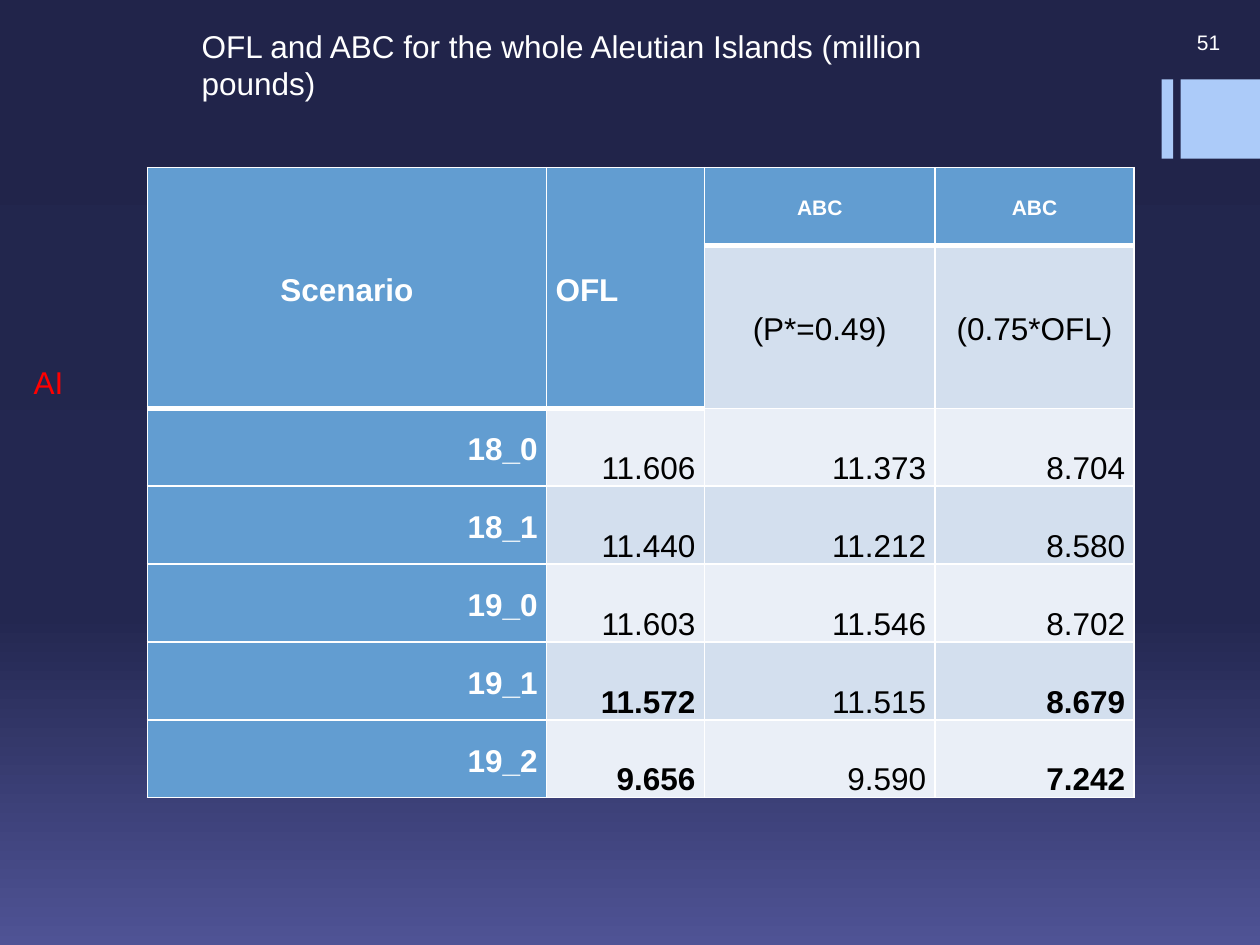
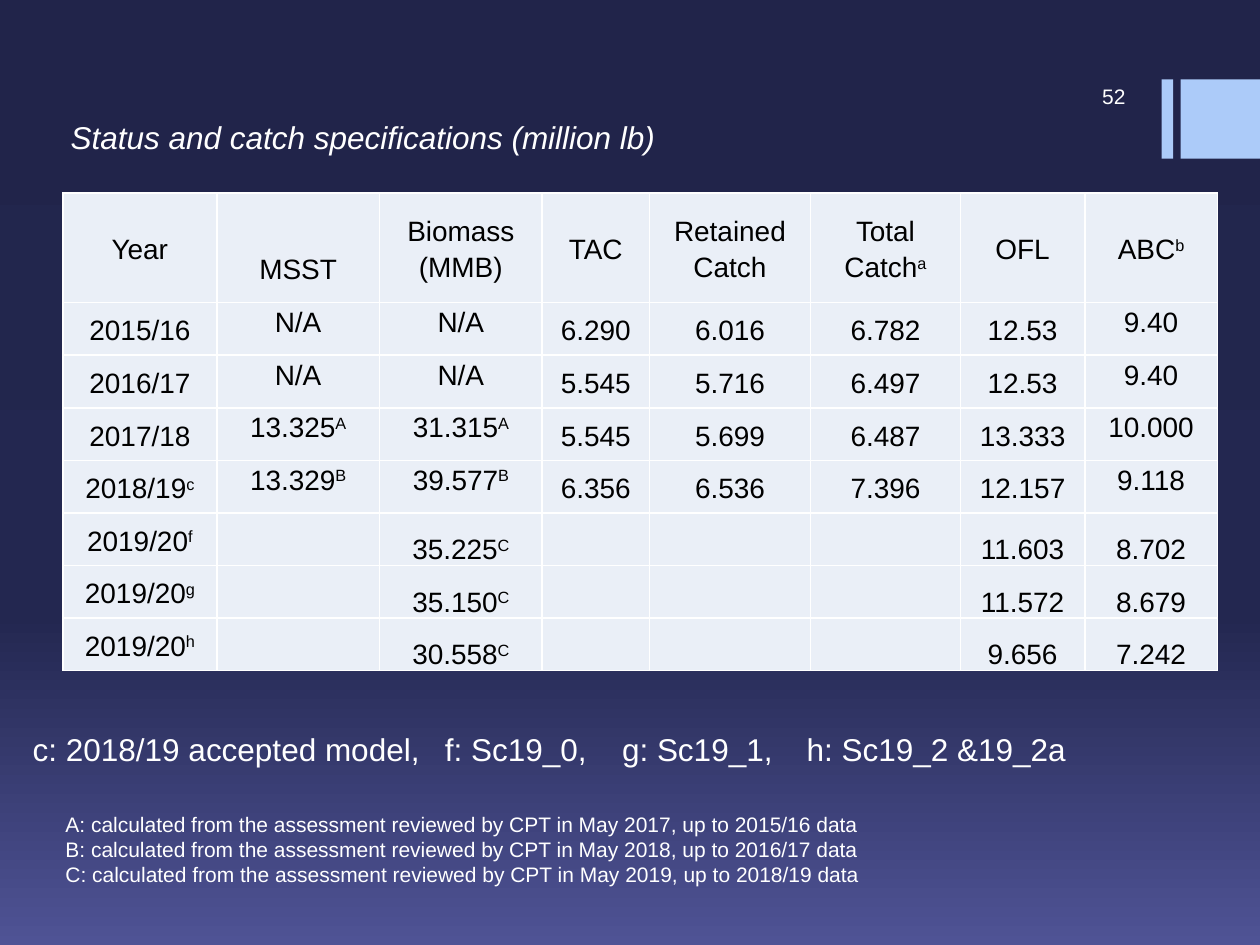
from copy import deepcopy

from lxml import etree
from pptx import Presentation
from pptx.dml.color import RGBColor
from pptx.enum.shapes import MSO_SHAPE
from pptx.enum.text import MSO_ANCHOR, MSO_AUTO_SIZE, PP_ALIGN
from pptx.oxml.ns import qn
from pptx.util import Cm, Pt

TOP, MIDDLE, BOTTOM = MSO_ANCHOR.TOP, MSO_ANCHOR.MIDDLE, MSO_ANCHOR.BOTTOM
LEFT, CENTER, RIGHT = PP_ALIGN.LEFT, PP_ALIGN.CENTER, PP_ALIGN.RIGHT
RECTANGLE = MSO_SHAPE.RECTANGLE
FIXED_SIZE = MSO_AUTO_SIZE.NONE

FONT = "Arial"
WHITE = RGBColor(0xFF, 0xFF, 0xFF)
BLACK = RGBColor(0x00, 0x00, 0x00)
RED = RGBColor(0xFF, 0x00, 0x00)
BAR_BLUE = RGBColor(0xAC, 0xCB, 0xF9)
HEADER_BLUE = RGBColor(0x62, 0x9D, 0xD1)
BAND_DARK = RGBColor(0xD3, 0xDF, 0xEE)
BAND_LIGHT = RGBColor(0xEA, 0xEF, 0xF7)
SKY = [(0, RGBColor(0x21, 0x24, 0x4A)),
       (0.65, RGBColor(0x23, 0x27, 0x50)),
       (1, RGBColor(0x4F, 0x53, 0x95))]


def place_text(shape, box, text, size=18, color=WHITE, align=LEFT, anchor=TOP):
    """Move a title or text box to box (cm) and set its text, one paragraph a line."""
    shape.left, shape.top, shape.width, shape.height = [Cm(v) for v in box]
    frame = shape.text_frame
    frame.text = text
    frame.word_wrap = True
    frame.auto_size = FIXED_SIZE
    frame.vertical_anchor = anchor
    for paragraph in frame.paragraphs:
        paragraph.alignment = align
        paragraph.font.name = FONT
        paragraph.font.size = Pt(size)
        paragraph.font.color.rgb = color
    return frame


def fill_cell(cell, text, fill, size, color=BLACK, bold=False, align=CENTER,
              anchor=MIDDLE, bottom_line=1):
    """Write a cell with white borders; text after ^ is superscript."""
    cell.fill.solid()
    cell.fill.fore_color.rgb = fill
    cell.vertical_anchor = anchor
    cell.margin_left = cell.margin_right = Cm(0.18)
    cell.margin_top = cell.margin_bottom = 0
    paragraph = cell.text_frame.paragraphs[0]
    paragraph.alignment = align
    paragraph.line_spacing = 1.15
    paragraph.font.name = FONT
    paragraph.font.size = Pt(size)
    paragraph.font.bold = bold
    paragraph.font.color.rgb = color
    base, _, mark = text.partition("^")
    if base:
        paragraph.add_run().text = base
    if mark:
        superscript = paragraph.add_run()
        superscript.text = mark
        superscript._r.get_or_add_rPr().set("baseline", "30000")
    properties = cell._tc.get_or_add_tcPr()
    for position, side in enumerate(("lnL", "lnR", "lnT", "lnB")):
        width = bottom_line if side == "lnB" else 1
        line = etree.Element(qn(f"a:{side}"), w=str(Pt(width)))
        solid = etree.SubElement(line, qn("a:solidFill"))
        etree.SubElement(solid, qn("a:srgbClr"), val=str(WHITE))
        properties.insert(position, line)


prs = Presentation()
prs.slide_width, prs.slide_height = Cm(25.4), Cm(19.05)
title_only = prs.slide_layouts[5]
limits = prs.slides.add_slide(title_only)
status = prs.slides.add_slide(title_only)

# Shared look, kept on the master
master = prs.slide_master
sky = master.background.fill
sky.gradient()
sky.gradient_angle = 270
stop_list = master.element.find(".//" + qn("a:gsLst"))
stop_list.append(deepcopy(stop_list[-1]))
for stop, (position, color) in zip(sky.gradient_stops, SKY):
    stop.position = position
    stop.color.rgb = color

for number, (left, width) in enumerate([(23.42, 0.23), (23.8, 1.6)]):
    bar = limits.shapes.add_shape(RECTANGLE, Cm(left), Cm(1.6), Cm(width), Cm(1.6))
    bar.shadow.inherit = False
    bar.fill.solid()
    bar.fill.fore_color.rgb = BAR_BLUE
    bar.line.fill.background()
    bar.element.nvSpPr.cNvPr.set("id", str(20 + number))
    master.shapes.element.append(bar.element)

# Titles and page numbers
for slide, title, title_box, page, page_place in [
    (limits, "OFL and ABC for the whole Aleutian Islands (million pounds)",
     (3.81, 0.41, 17.15, 1.8), "51", (22.23, 0.43)),
    (status, "Status and catch specifications (million lb)",
     (1.17, 2.26, 23.06, 1.02), "52", (20.32, 1.52)),
]:
    place_text(slide.shapes.title, title_box, title)
    place_text(slide.shapes.add_textbox(0, 0, 0, 0), (*page_place, 2.62, 0.84),
               page, size=12, align=RIGHT, anchor=MIDDLE)
status.shapes.title.text_frame.paragraphs[0].font.italic = True

# Catch limits by scenario
place_text(limits.shapes.add_textbox(0, 0, 0, 0), (0.43, 7.19, 1.47, 1.02), "AI", color=RED)

SCENARIOS = [
    ("18_0", "11.606", "11.373", "8.704"),
    ("18_1", "11.440", "11.212", "8.580"),
    ("19_0", "11.603", "11.546", "8.702"),
    ("19_1", "11.572", "11.515", "8.679"),
    ("19_2", "9.656", "9.590", "7.242"),
]
BOLD_SCENARIOS = ("19_1", "19_2")
scenario_widths = [8.05, 3.18, 4.65, 4.01]
scenario_heights = [1.57, 3.28] + [1.57] * len(SCENARIOS)
scenario_table = limits.shapes.add_table(
    len(scenario_heights), len(scenario_widths), Cm(2.97), Cm(3.38),
    Cm(sum(scenario_widths)), Cm(sum(scenario_heights))).table

for c, heading in enumerate(["Scenario", "OFL", "ABC", "ABC"]):
    fill_cell(scenario_table.cell(0, c), heading, HEADER_BLUE, 18 if c < 2 else 12, WHITE,
              bold=True, align=LEFT if heading == "OFL" else CENTER, bottom_line=3)
for c, rule in enumerate(["", "", "(P*=0.49)", "(0.75*OFL)"]):
    fill_cell(scenario_table.cell(1, c), rule, BAND_DARK if rule else HEADER_BLUE, 18,
              bottom_line=1 if rule else 3)
for c in (0, 1):
    scenario_table.cell(0, c).merge(scenario_table.cell(1, c))
for r, (scenario, *values) in enumerate(SCENARIOS, start=2):
    fill_cell(scenario_table.cell(r, 0), scenario, HEADER_BLUE, 18, WHITE,
              bold=True, align=RIGHT)
    for c, value in enumerate(values, start=1):
        fill_cell(scenario_table.cell(r, c), value, BAND_DARK if r % 2 else BAND_LIGHT, 18,
                  bold=scenario in BOLD_SCENARIOS and c != 2, align=RIGHT, anchor=BOTTOM)

# Status and catch by year
YEARS = [
    ("Year", "MSST", "Biomass (MMB)", "TAC", "Retained Catch", "Total Catch^a", "OFL", "ABC^b"),
    ("2015/16", "N/A", "N/A", "6.290", "6.016", "6.782", "12.53", "9.40"),
    ("2016/17", "N/A", "N/A", "5.545", "5.716", "6.497", "12.53", "9.40"),
    ("2017/18", "13.325^A", "31.315^A", "5.545", "5.699", "6.487", "13.333", "10.000"),
    ("2018/19^c", "13.329^B", "39.577^B", "6.356", "6.536", "7.396", "12.157", "9.118"),
    ("2019/20^f", "", "35.225^C", "", "", "", "11.603", "8.702"),
    ("2019/20^g", "", "35.150^C", "", "", "", "11.572", "8.679"),
    ("2019/20^h", "", "30.558^C", "", "", "", "9.656", "7.242"),
]
FIRST_PROJECTION = 5
TOP_COLUMNS = (1, 2, 7)
year_widths = [3.1, 3.28, 3.28, 2.16, 3.25, 3.02, 2.51, 2.67]
year_heights = [2.21] + [1.06] * (len(YEARS) - 1)
year_table = status.shapes.add_table(
    len(YEARS), len(year_widths), Cm(1.27), Cm(3.89),
    Cm(sum(year_widths)), Cm(sum(year_heights))).table

for r, row in enumerate(YEARS):
    for c, value in enumerate(row):
        anchor = MIDDLE
        if r >= FIRST_PROJECTION and c > 0:
            anchor = BOTTOM
        elif 0 < r < FIRST_PROJECTION and c in TOP_COLUMNS:
            anchor = TOP
        fill_cell(year_table.cell(r, c), value, BAND_LIGHT, 16, anchor=anchor)
year_table.cell(0, 1).margin_top = Cm(0.8)

for table, widths, heights in [(scenario_table, scenario_widths, scenario_heights),
                               (year_table, year_widths, year_heights)]:
    table.first_row = table.horz_banding = False
    for column, width in zip(table.columns, widths):
        column.width = Cm(width)
    for row, height in zip(table.rows, heights):
        row.height = Cm(height)

# Keys below the year table
model_key = place_text(
    status.shapes.add_textbox(0, 0, 0, 0), (0.41, 14.6, 23.93, 1.02),
    "c: 2018/19 accepted model,\tf: Sc19_0,\tg: Sc19_1,\th: Sc19_2 &19_2a")
tabs = etree.Element(qn("a:tabLst"))
for position in (8.31, 11.88, 15.6):
    etree.SubElement(tabs, qn("a:tab"), pos=str(Cm(position)), algn="l")
model_key.paragraphs[0]._p.get_or_add_pPr().insert(0, tabs)

reviews = [("A", 2017, "2015/16"), ("B", 2018, "2016/17"), ("C", 2019, "2018/19")]
place_text(
    status.shapes.add_textbox(0, 0, 0, 0), (1.07, 16.23, 21.23, 2.57),
    "\n".join(f"{mark}: calculated from the assessment reviewed by CPT in May {year}, "
              f"up to {last} data" for mark, year, last in reviews), size=12)

prs.save("out.pptx")
